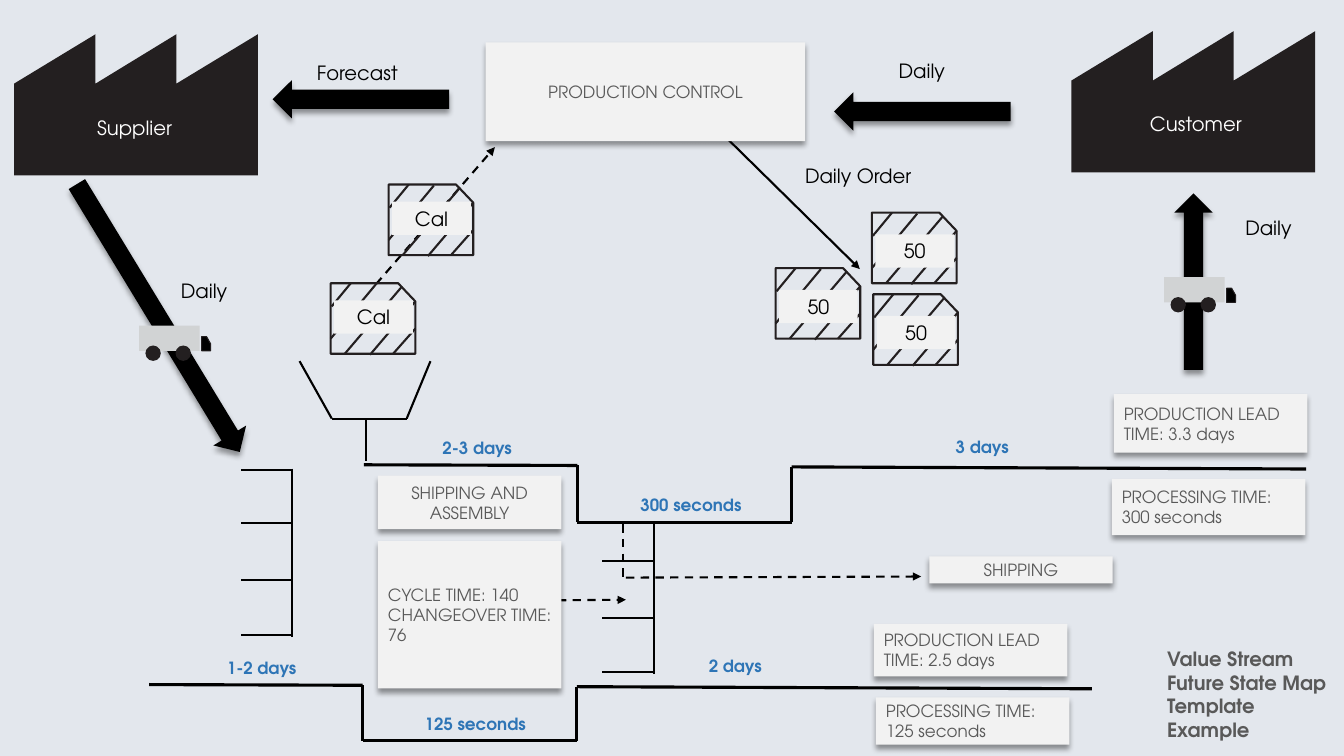
from lxml import etree
from pptx import Presentation
from pptx.dml.color import RGBColor
from pptx.enum.dml import MSO_LINE
from pptx.enum.shapes import MSO_CONNECTOR, MSO_SHAPE
from pptx.enum.text import MSO_ANCHOR, PP_ALIGN
from pptx.oxml.ns import qn
from pptx.util import Pt

RECT, OVAL, ARROW = MSO_SHAPE.RECTANGLE, MSO_SHAPE.OVAL, MSO_SHAPE.DOWN_ARROW
STRAIGHT, DASH = MSO_CONNECTOR.STRAIGHT, MSO_LINE.DASH
LEFT, CENTER = PP_ALIGN.LEFT, PP_ALIGN.CENTER
TOP, MIDDLE = MSO_ANCHOR.TOP, MSO_ANCHOR.MIDDLE

BACKDROP = RGBColor(0xE3, 0xE7, 0xED)
PANEL = RGBColor(0xF2, 0xF2, 0xF2)
GREY = RGBColor(0x59, 0x59, 0x59)
BLUE = RGBColor(0x2E, 0x75, 0xB6)
INK = RGBColor(0x23, 0x1F, 0x20)
TRUCK_GREY = RGBColor(0xD1, 0xD3, 0xD4)
BLACK = RGBColor(0, 0, 0)
WHITE = RGBColor(0xFF, 0xFF, 0xFF)

FONT = "TeX Gyre Adventor"
PLAIN = {"size": Pt(14), "color": BLACK}
REVERSED = {"size": Pt(14), "color": WHITE}
HEADING = {"size": Pt(14), "color": GREY, "bold": True}
DURATION = {"size": Pt(12), "color": BLUE, "bold": True}
BOXED = {"size": Pt(12), "color": GREY}

# Content: every length is in points, boxes are (left, top, width, height)
TITLE = ("Value Stream Future State Map Template Example", (826.5, 458.6, 133.2, 74.9))
FLOW_ARROWS = [  # box before rotation, angle
    ((99.4, 115.2, 27.4, 223.9), 328.7),
    ((838.8, 138.2, 27.4, 126), 180),
    ((645.1, 16.6, 27.4, 126), 90),
    ((244.1, 7.9, 27.4, 126), 90),
]
FLOW_LABELS = [
    ("Daily", (594, 31, 128.9, 38.9)),
    ("Forecast", (190.8, 32.4, 128.9, 38.9)),
    ("Daily", (97.9, 187.9, 95.8, 38.9)),
    ("Daily", (858.2, 143.3, 95.8, 38.9)),
    ("Daily Order", (548.6, 105.8, 128.9, 38.9)),
]
DURATIONS = [
    ("2-3 days", (271.4, 311, 139, 18)),
    ("300 seconds", (424.1, 351.4, 139, 18)),
    ("3 days", (588.2, 309.6, 226.8, 19.4)),
    ("1-2 days", (117.4, 468, 139, 18)),
    ("125 seconds", (270, 508.3, 139, 18)),
    ("2 days", (411.8, 465.8, 226.8, 19.4)),
]
PANELS = [
    (["PRODUCTION LEAD TIME: 3.3 days"], (795.6, 281.5, 138.2, 41.8), LEFT),
    (["PROCESSING TIME: 300 seconds"], (794.2, 342, 138.2, 40.3), LEFT),
    (["PRODUCTION LEAD TIME: 2.5 days"], (624.2, 445.7, 138.2, 37.4), LEFT),
    (["PROCESSING TIME: 125 seconds"], (625.7, 498.2, 138.2, 33.8), LEFT),
    (["SHIPPING AND ASSEMBLY"], (270, 339.8, 131, 38.2), CENTER),
    (["SHIPPING"], (663.8, 397.4, 131, 19.4), CENTER),
    (["PRODUCTION CONTROL"], (347, 30.2, 228.2, 70.6), CENTER),
    (["CYCLE TIME: 140", "CHANGEOVER TIME: 76"], (270, 386.6, 131, 105.1), LEFT),
]
CHAINS = [  # joined points, line width
    ([(260, 332), (412.5, 332.5), (412.5, 373), (565.5, 373), (565.5, 333.5), (933, 335)], 2.25),
    ([(106.5, 489), (259, 489.5), (259, 529), (412, 529), (412, 490.5), (780, 492)], 2.25),
    ([(214, 258), (237, 299), (290.5, 299), (307.5, 258)], 1.5),
    ([(261.4, 299.5), (261.4, 329)], 1.5),
]
RACKS = [  # spine x, top, bottom, rung heights
    (208.8, 334.8, 455, [335.5, 373.7, 414, 453.6]),
    (467, 373, 481.7, [401, 441.4, 480.2]),
]
RUNG = 36.7
SIGNALS = [  # start, end, dashed, arrowhead
    ((516.2, 95.8), (614.2, 192.2), False, True),
    ((268.6, 203), (353.5, 105.1), True, True),
    ((356.4, 429.1), (447.1, 428.4), True, True),
    ((447.1, 412.6), (658, 411.8), True, True),
    ((445, 374.4), (445, 412.6), True, False),
]
FACTORIES = [  # name, corner, label corner
    ("Supplier", (10, 24.5), (9.4, 72)),
    ("Customer", (765.2, 22.3), (767.5, 69.1)),
]
FACTORY_OUTLINE = [(0, 35.3), (58.2, 0), (58.2, 35.3), (116, 0), (116, 35.3),
                   (174.2, 0), (174.2, 100.8), (0, 100.8)]
TRUCKS = [(831.6, 198), (99.4, 232.6)]
CAB_OUTLINE = [(44.6, 7.9), (44.6, 18), (51, 18), (51, 12.9), (48.2, 7.9)]
CARDS = [  # text, corner, label drop
    ("Cal", (236.2, 202.3), 12.2),
    ("Cal", (277.6, 131.8), 12.2),
    ("50", (554, 191.5), 15.5),
    ("50", (622.8, 151.9), 15.5),
    ("50", (623.8, 210.2), 15.5),
]
CARD_OUTLINE = [(0, 0), (0, 50.4), (60.5, 50.4), (60.5, 13), (48.2, 0)]
CARD_HATCHES = [
    [(14.4, 0), (0.7, 16.6)], [(32.4, 0.7), (0, 39.6)], [(51.1, 2.2), (10.1, 50.4)],
    [(60.5, 13), (28.1, 51.1)], [(60.5, 32.4), (44.6, 50.4)],
]

deck = Presentation()
deck.slide_width, deck.slide_height = Pt(960), Pt(540)
page = deck.slides.add_slide(deck.slide_layouts[6])


def paint(shape, fill=None, line=None, width=0.75):
    shape.shadow.inherit = False
    for part, color in ((shape.fill, fill), (shape.line.fill, line)):
        if color is None:
            part.background()
        else:
            part.solid()
            part.fore_color.rgb = color
    if line is not None:
        shape.line.width = Pt(width)
    return shape


def add_block(kind, box, fill):
    return paint(page.shapes.add_shape(kind, *map(Pt, box)), fill)


def cast_shadow(shape):
    effects = shape.element.spPr.find(qn("a:effectLst"))
    shadow = etree.SubElement(effects, qn("a:outerShdw"), blurRad=str(Pt(4)),
                              dist=str(Pt(3)), dir="5400000", rotWithShape="0")
    color = etree.SubElement(shadow, qn("a:srgbClr"), val="000000")
    etree.SubElement(color, qn("a:alpha"), val="40000")


def write(shape, lines, style, align=CENTER, anchor=MIDDLE):
    frame = shape.text_frame
    frame.word_wrap, frame.vertical_anchor = True, anchor
    for number, text in enumerate(lines):
        para = frame.add_paragraph() if number else frame.paragraphs[0]
        para.alignment = align
        span = para.add_run()
        span.text, span.font.name = text, FONT
        for name, value in style.items():
            if name == "color":
                span.font.color.rgb = value
            else:
                setattr(span.font, name, value)


def add_label(text, box, style, **layout):
    write(page.shapes.add_textbox(*map(Pt, box)), [text], style, **layout)


def add_line(start, end, width=1.5, dashed=False, arrow=False):
    line = page.shapes.add_connector(STRAIGHT, *map(Pt, start + end))
    line.line.color.rgb, line.line.width = BLACK, Pt(width)
    if dashed:
        line.line.dash_style = DASH
    if arrow:
        etree.SubElement(line.line._get_or_add_ln(), qn("a:tailEnd"), type="triangle")
    etree.SubElement(line.element.spPr, qn("a:effectLst"))


def add_outline(corner, outline, strokes=()):
    def place(points):
        return [(Pt(corner[0] + x), Pt(corner[1] + y)) for x, y in points]

    first, *rest = place(outline)
    builder = page.shapes.build_freeform(*first)
    builder.add_line_segments(rest, close=True)
    for start, end in map(place, strokes):
        builder.move_to(*start)
        builder.add_line_segments([end], close=False)
    return builder.convert_to_shape()


# Backdrop and title
add_block(RECT, (0, 0, 960, 540), BACKDROP)
add_label(*TITLE, HEADING, align=LEFT, anchor=TOP)

# Material and information flows
for box, angle in FLOW_ARROWS:
    arrow = add_block(ARROW, box, BLACK)
    arrow.rotation = angle
    cast_shadow(arrow)
for labels, style in ((FLOW_LABELS, PLAIN), (DURATIONS, DURATION)):
    for text, box in labels:
        add_label(text, box, style)

# Timelines, funnel, racks and signals
for points, width in CHAINS:
    for start, end in zip(points, points[1:]):
        add_line(start, end, width)
for x, top, bottom, rungs in RACKS:
    add_line((x, top), (x, bottom))
    for y in rungs:
        add_line((x, y), (x - RUNG, y))
for signal in SIGNALS:
    add_line(*signal[:2], dashed=signal[2], arrow=signal[3])

# Process and time panels
for lines, box, align in PANELS:
    panel = add_block(RECT, box, PANEL)
    cast_shadow(panel)
    write(panel, lines, BOXED, align)

# Factories
for name, corner, label_corner in FACTORIES:
    paint(add_outline(corner, FACTORY_OUTLINE), INK)
    add_label(name, (*label_corner, 173.5, 38.9), REVERSED)

# Trucks
for x, y in TRUCKS:
    add_block(RECT, (x, y, 43.2, 18), TRUCK_GREY)
    paint(add_outline((x, y), CAB_OUTLINE), BLACK, INK)
    for offset in (4.5, 26):
        add_block(OVAL, (x + offset, y + 14.2, 11, 11), INK)

# Kanban cards
for text, (x, y), drop in CARDS:
    paint(add_outline((x, y), CARD_OUTLINE, CARD_HATCHES), line=INK, width=1.5)
    write(add_block(RECT, (x + 2.5, y + drop, 56.2, 23.8), PANEL), [text], PLAIN)

deck.save("out.pptx")
